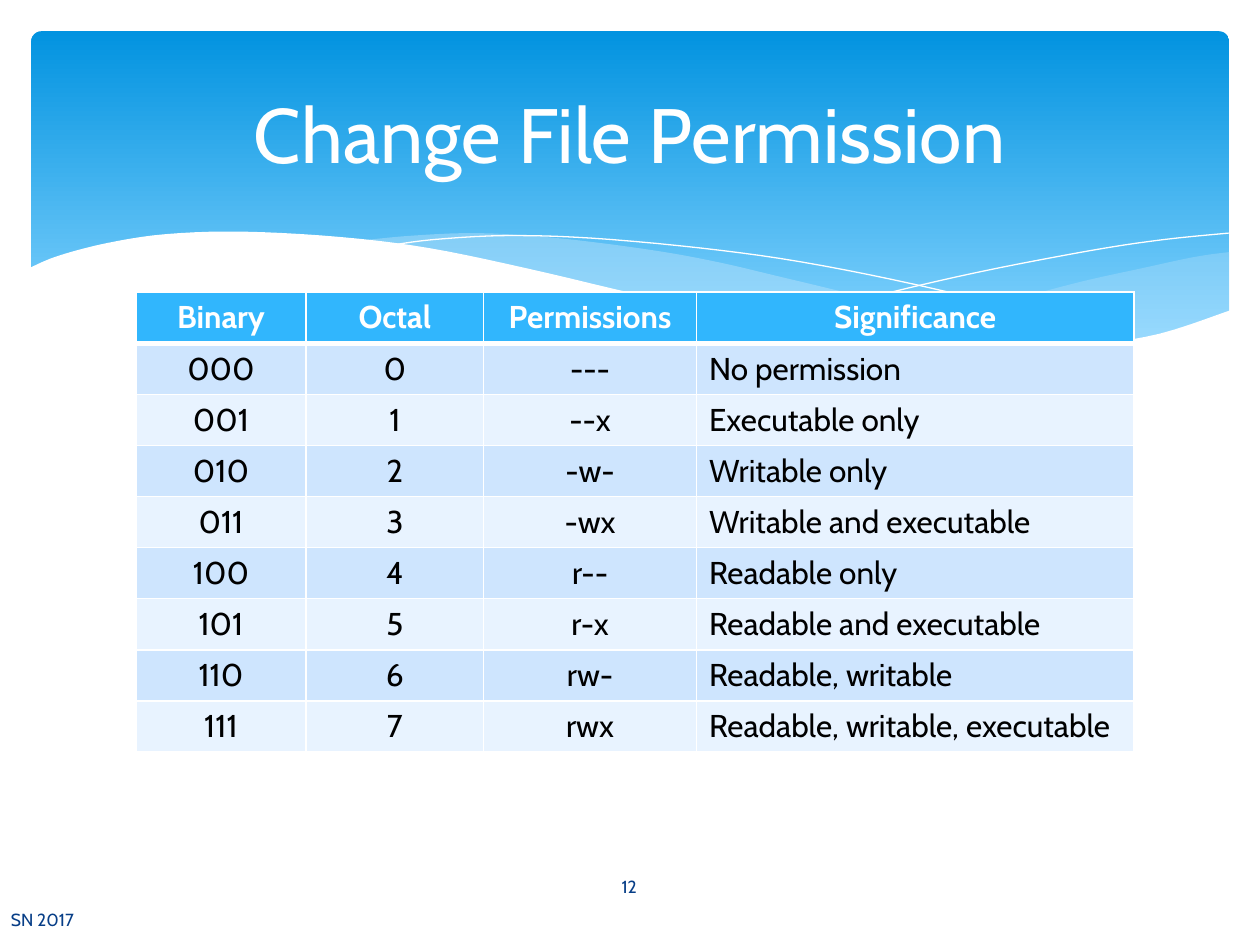
from lxml.etree import SubElement
from pptx import Presentation
from pptx.dml.color import RGBColor
from pptx.enum.shapes import MSO_SHAPE
from pptx.enum.text import MSO_ANCHOR, PP_ALIGN
from pptx.oxml.ns import qn
from pptx.util import Cm, Pt

FONT = "Cabin"
WHITE = RGBColor(0xFF, 0xFF, 0xFF)
BLACK = RGBColor(0, 0, 0)
NAVY = RGBColor(0x07, 0x3E, 0x87)
DEEP_BLUE = RGBColor(0x02, 0x93, 0xE0)
SKY_BLUE = RGBColor(0x83, 0xD3, 0xFE)
PALE_BLUE = RGBColor(0xC6, 0xE7, 0xFC)
HEADER_BLUE = RGBColor(0x31, 0xB6, 0xFD)
BANDS = (RGBColor(0xE8, 0xF3, 0xFF), RGBColor(0xCE, 0xE5, 0xFE))

RIGHT_WAVE_TOP = [(16.79, 6.73), (18.52, 6.43), (20.45, 6.02), (21.87, 5.66),
                  (23.01, 5.41), (24.08, 5.18), (24.79, 5.08)]
RIGHT_WAVE_BOTTOM = [(24.79, 6.27), (23.93, 6.58), (22.78, 6.86), (21.44, 7.04),
                     (20.4, 7.06), (19.23, 7.01), (17.91, 6.88), (16.79, 6.73)]
MIDDLE_WAVE_TOP = [(7.26, 4.85), (8.33, 4.75), (9.65, 4.7), (11.23, 4.8),
                   (13.06, 5.03), (14.45, 5.28), (15.98, 5.64), (17.93, 6.1),
                   (19.69, 6.45), (21.26, 6.73), (22.68, 6.93)]
MIDDLE_WAVE_BOTTOM = [(22.68, 6.93), (21.54, 7.04), (20.22, 7.06), (18.69, 6.99),
                      (16.89, 6.76), (14.83, 6.4), (12.47, 5.89), (10.85, 5.49),
                      (9.19, 5.16), (7.26, 4.85)]
FALLING_LINE = [(7.85, 4.95), (8.74, 4.83), (10.19, 4.75), (11.91, 4.8),
                (14.12, 5), (16.15, 5.28), (18.47, 5.74), (21.11, 6.38),
                (23.04, 6.91)]
RISING_LINE = [(15.57, 6.53), (17.65, 5.97), (19.71, 5.49), (22, 5.05),
               (23.47, 4.83), (24.77, 4.7)]
PAGE_EDGE = [(24.82, 6.25), (23.37, 6.73), (21.92, 6.96), (20.55, 7.04),
             (18.9, 6.96), (16.97, 6.73), (14.71, 6.35), (12.78, 5.92),
             (10.62, 5.41), (8.64, 5), (6.88, 4.78), (4.9, 4.67),
             (3.35, 4.72), (2.16, 4.9), (1.17, 5.16), (0.58, 5.41)]
PAGE_CORNERS = [(0.58, 8.36), (24.82, 8.36)]

HEADINGS = ("Binary", "Octal", "Permissions", "Significance")
MEANINGS = (
    ("---", "No permission"),
    ("--x", "Executable only"),
    ("-w-", "Writable only"),
    ("-wx", "Writable and executable"),
    ("r--", "Readable only"),
    ("r-x", "Readable and executable"),
    ("rw-", "Readable, writable"),
    ("rwx", "Readable, writable, executable"),
)
COLUMN_WIDTHS = (3.43, 3.58, 4.29, 8.82)
ROW_HEIGHT = 1.03


def smooth(knots, steps=5):
    padded = [knots[0], *knots, knots[-1]]
    curve = [knots[0]]
    for a, b, c, d in zip(padded, padded[1:], padded[2:], padded[3:]):
        for step in range(1, steps + 1):
            t = step / steps
            curve.append(tuple(
                q + t * (r - p) / 2
                + t * t * (2 * p - 5 * q + 4 * r - s) / 2
                + t ** 3 * (3 * q - p - 3 * r + s) / 2
                for p, q, r, s in zip(a, b, c, d)))
    return curve


def add_outline(slide, points, close):
    corners = [(Cm(x), Cm(y)) for x, y in points]
    builder = slide.shapes.build_freeform(*corners[0])
    builder.add_line_segments(corners[1:], close=close)
    outline = builder.convert_to_shape()
    outline.shadow.inherit = False
    return outline


def add_wave(slide, points, color, opacity=100):
    wave = add_outline(slide, points, True)
    wave.fill.solid()
    wave.fill.fore_color.rgb = color
    wave.line.fill.background()
    tint = wave.fill._xPr.find(qn("a:solidFill"))[0]
    SubElement(tint, qn("a:alpha"), val=str(opacity * 1000))


def add_hairline(slide, knots):
    hairline = add_outline(slide, smooth(knots), False)
    hairline.fill.background()
    hairline.line.color.rgb = WHITE
    hairline.line.width = Pt(0)


def add_banner(slide):
    banner = slide.shapes.add_shape(
        MSO_SHAPE.ROUNDED_RECTANGLE, Cm(0.63), Cm(0.63), Cm(24.15), Cm(6.86))
    banner.adjustments[0] = 0.03
    banner.shadow.inherit = False
    banner.line.fill.background()
    banner.fill.gradient()
    banner.fill.gradient_angle = 270
    stops = banner.fill.gradient_stops
    for stop, position, color in zip(stops, (0, 0.9), (DEEP_BLUE, SKY_BLUE)):
        stop.position = position
        stop.color.rgb = color


def format_text(paragraph, size, color, align, bold=False):
    paragraph.alignment = align
    for run in paragraph.runs:
        run.font.name = FONT
        run.font.size = Pt(size)
        run.font.bold = bold
        run.font.color.rgb = color


def add_label(slide, text, bounds, size, color, align):
    label = slide.shapes.add_textbox(*(Cm(length) for length in bounds))
    frame = label.text_frame
    frame.word_wrap = True
    frame.vertical_anchor = MSO_ANCHOR.MIDDLE
    frame.text = text
    format_text(frame.paragraphs[0], size, color, align)


def set_borders(cell, widths):
    properties = cell._tc.get_or_add_tcPr()
    for side, width in widths.items():
        border = SubElement(properties, qn(f"a:ln{side}"), w=str(Pt(width)))
        paint = SubElement(border, qn("a:solidFill"))
        SubElement(paint, qn("a:srgbClr"), val=str(WHITE))


def add_permission_table(slide):
    rows = [HEADINGS] + [(f"{octal:03b}", str(octal), *meaning)
                         for octal, meaning in enumerate(MEANINGS)]
    table = slide.shapes.add_table(
        len(rows), len(HEADINGS), Cm(2.74), Cm(5.89),
        Cm(sum(COLUMN_WIDTHS)), Cm(ROW_HEIGHT * len(rows))).table
    for column, width in zip(table.columns, COLUMN_WIDTHS):
        column.width = Cm(width)
    for r, values in enumerate(rows):
        table.rows[r].height = Cm(ROW_HEIGHT)
        header = r == 0
        for c, value in enumerate(values):
            cell = table.cell(r, c)
            cell.text_frame.text = value
            set_borders(cell, {"L": 1, "R": 1, "T": 3 if r == 1 else 1,
                               "B": 3 if header else 1})
            cell.fill.solid()
            cell.fill.fore_color.rgb = HEADER_BLUE if header else BANDS[r % 2]
            centred = header or c < len(HEADINGS) - 1
            format_text(cell.text_frame.paragraphs[0], 18,
                        WHITE if header else BLACK,
                        PP_ALIGN.CENTER if centred else PP_ALIGN.LEFT, header)


def main():
    presentation = Presentation()
    presentation.slide_width = Cm(25.4)
    presentation.slide_height = Cm(19.05)
    slide = presentation.slides.add_slide(presentation.slide_layouts[6])

    add_banner(slide)
    add_wave(slide, smooth(RIGHT_WAVE_TOP) + smooth(RIGHT_WAVE_BOTTOM), PALE_BLUE, 29)
    add_wave(slide, smooth(MIDDLE_WAVE_TOP) + smooth(MIDDLE_WAVE_BOTTOM), PALE_BLUE, 40)
    add_hairline(slide, FALLING_LINE)
    add_hairline(slide, RISING_LINE)
    add_wave(slide, smooth(PAGE_EDGE) + PAGE_CORNERS, WHITE)

    add_permission_table(slide)
    add_label(slide, "12", (11.07, 17.37, 3.23, 1.02), 10, NAVY, PP_ALIGN.CENTER)
    add_label(slide, "Change File Permission", (1.27, 0.94, 22.86, 3.48), 44,
              WHITE, PP_ALIGN.CENTER)
    add_label(slide, "SN 2017", (-0.03, 18.03, 14, 1.02), 10, NAVY, PP_ALIGN.LEFT)
    presentation.save("out.pptx")


if __name__ == "__main__":
    main()
